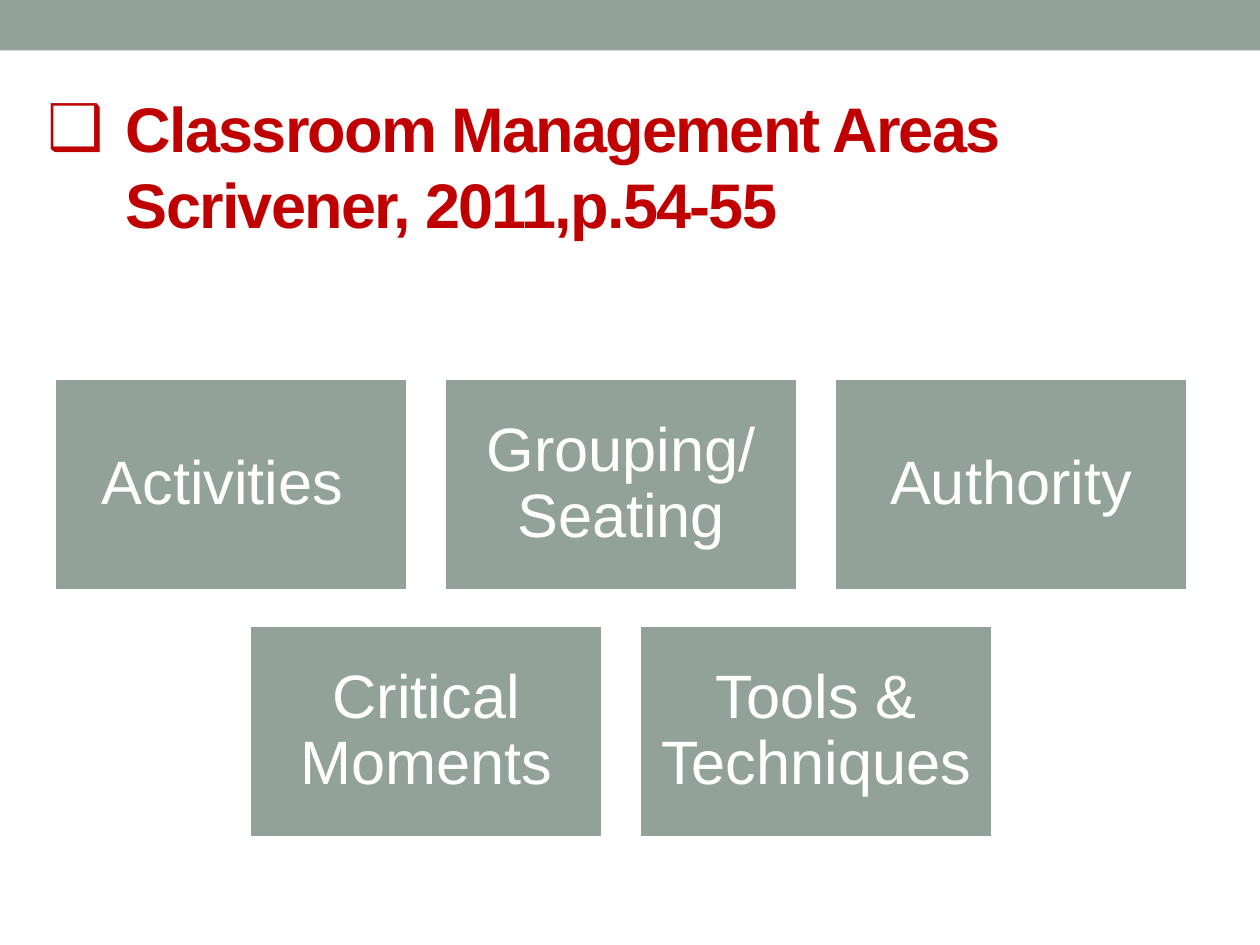
from lxml import etree
from pptx import Presentation
from pptx.dml.color import RGBColor
from pptx.enum.shapes import MSO_SHAPE
from pptx.enum.text import MSO_ANCHOR, PP_ALIGN
from pptx.oxml.ns import qn
from pptx.util import Inches, Pt

RECTANGLE = MSO_SHAPE.RECTANGLE
TOP, MIDDLE = MSO_ANCHOR.TOP, MSO_ANCHOR.MIDDLE
CENTER = PP_ALIGN.CENTER

HEADING = "Classroom Management Areas\vScrivener, 2011,p.54-55"
AREA_ROWS = [
    ["Activities ", "Grouping/ Seating", "Authority"],
    ["Critical Moments", "Tools & Techniques"],
]
THEME = {
    "font": "Arial",
    "sage": RGBColor(0x93, 0xA2, 0x99),
    "red": RGBColor(0xC0, 0x00, 0x00),
    "white": RGBColor(0xFF, 0xFF, 0xFF),
    "heading_size": Pt(36),
    "area_size": Pt(35),
}
SLIDE_WIDTH, SLIDE_HEIGHT = 10, 7.5
CARD_WIDTH, CARD_HEIGHT = 2.81, 1.69
CARD_GAP_X, CARD_GAP_Y = 0.285, 0.27
CARDS_CENTER, CARDS_TOP = 4.93, 3


def style_run(run, size, color, bold=False):
    run.font.name = THEME["font"]
    run.font.size = size
    run.font.bold = bold
    run.font.color.rgb = color


def add_block(slide, left, top, width, height):
    block = slide.shapes.add_shape(
        RECTANGLE, Inches(left), Inches(top), Inches(width), Inches(height)
    )
    block.shadow.inherit = False
    block.fill.solid()
    block.fill.fore_color.rgb = THEME["sage"]
    block.line.fill.background()
    return block


def add_heading(slide):
    heading = slide.shapes.add_textbox(
        Inches(0.28), Inches(0.58), Inches(9.45), Inches(1.99)
    )
    frame = heading.text_frame
    frame.word_wrap = True
    frame.vertical_anchor = TOP
    frame.margin_top = Inches(0.13)
    frame.text = HEADING
    paragraph = frame.paragraphs[0]
    properties = paragraph._p.get_or_add_pPr()
    properties.set("marL", str(Inches(0.62)))
    properties.set("indent", str(-Inches(0.62)))
    etree.SubElement(properties, qn("a:buFont")).set("typeface", THEME["font"])
    etree.SubElement(properties, qn("a:buChar")).set("char", "❑")
    for run in paragraph.runs:
        style_run(run, THEME["heading_size"], THEME["red"], bold=True)
        run.font._element.set("spc", "-100")


def add_area(slide, label, left, top):
    card = add_block(slide, left, top, CARD_WIDTH, CARD_HEIGHT)
    card.line.color.rgb = THEME["white"]
    card.line.width = Pt(2.08)
    frame = card.text_frame
    frame.word_wrap = True
    frame.vertical_anchor = MIDDLE
    frame.margin_left = frame.margin_right = Inches(0.15)
    frame.margin_top = frame.margin_bottom = Inches(0.15)
    frame.text = label
    paragraph = frame.paragraphs[0]
    paragraph.alignment = CENTER
    paragraph.line_spacing = 0.9
    style_run(paragraph.runs[0], THEME["area_size"], THEME["white"])


def main():
    deck = Presentation()
    deck.slide_width = Inches(SLIDE_WIDTH)
    deck.slide_height = Inches(SLIDE_HEIGHT)
    slide = deck.slides.add_slide(deck.slide_layouts[6])
    add_block(slide, 0, 0, SLIDE_WIDTH, 0.4)
    add_heading(slide)
    for row, labels in enumerate(AREA_ROWS):
        row_width = len(labels) * (CARD_WIDTH + CARD_GAP_X) - CARD_GAP_X
        row_left = CARDS_CENTER - row_width / 2
        top = CARDS_TOP + row * (CARD_HEIGHT + CARD_GAP_Y)
        for column, label in enumerate(labels):
            left = row_left + column * (CARD_WIDTH + CARD_GAP_X)
            add_area(slide, label, left, top)
    deck.save("out.pptx")


if __name__ == "__main__":
    main()
